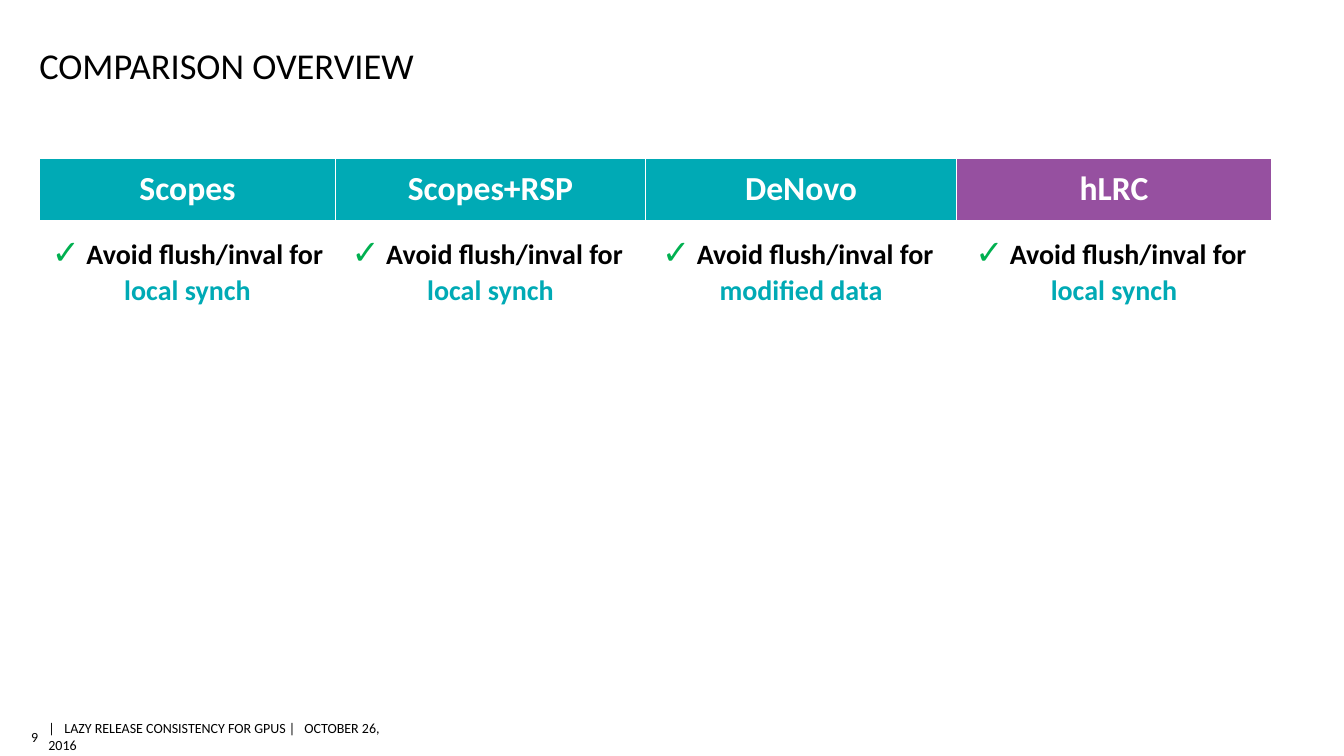
from dataclasses import dataclass

from lxml.etree import SubElement
from pptx import Presentation
from pptx.dml.color import RGBColor
from pptx.enum.text import MSO_ANCHOR, PP_ALIGN
from pptx.oxml.ns import qn
from pptx.util import Inches, Pt


@dataclass(frozen=True)
class Theme:
    font: str = "Calibri"
    black: str = "000000"
    white: str = "FFFFFF"
    teal: str = "00AAB5"
    purple: str = "9650A0"
    green: str = "00B050"
    title: int = 26
    heading: int = 24
    body: int = 20
    footer: int = 10


THEME = Theme()
COLUMN_WIDTHS = (2.94, 3.07, 3.09, 3.12)
ROW_HEIGHTS = (0.62, 0.99)
# Heading, heading fill, what the approach avoids flushing for
APPROACHES = (
    ("Scopes", THEME.teal, "local synch"),
    ("Scopes+RSP", THEME.teal, "local synch"),
    ("DeNovo", THEME.teal, "modified data"),
    ("hLRC", THEME.purple, "local synch"),
)


def add_span(para, text, size=THEME.body, color=THEME.black, bold=False):
    span = para.add_run()
    span.text = text
    span.font.name = THEME.font
    span.font.size = Pt(size)
    span.font.bold = bold
    span.font.color.rgb = RGBColor.from_string(color)


def add_text(page, box, text, size, anchor=MSO_ANCHOR.MIDDLE,
             align=PP_ALIGN.LEFT, top=0.04, bottom=0.04, tabs=()):
    frame = page.shapes.add_textbox(*map(Inches, box)).text_frame
    frame.word_wrap = True
    frame.vertical_anchor = anchor
    frame.margin_left = frame.margin_right = 0
    frame.margin_top, frame.margin_bottom = Inches(top), Inches(bottom)
    para = frame.paragraphs[0]
    para.alignment = align
    if tabs:
        stops = SubElement(para._p.get_or_add_pPr(), qn("a:tabLst"))
        for position in tabs:
            SubElement(stops, qn("a:tab"), pos=str(Inches(position)), algn="l")
    add_span(para, text, size=size)


def style_cell(cell, fill=None):
    """Set the fill and white one-point borders of a cell."""
    cell.vertical_anchor = MSO_ANCHOR.MIDDLE
    properties = cell._tc.get_or_add_tcPr()
    for side in ("a:lnL", "a:lnR", "a:lnT", "a:lnB"):
        line = SubElement(properties, qn(side), w=str(Pt(1)))
        solid = SubElement(line, qn("a:solidFill"))
        SubElement(solid, qn("a:srgbClr"), val=THEME.white)
    if fill:
        cell.fill.solid()
        cell.fill.fore_color.rgb = RGBColor.from_string(fill)
    else:
        cell.fill.background()


def centred(para):
    para.alignment = PP_ALIGN.CENTER
    return para


def add_comparison(page, left, top):
    size = (sum(COLUMN_WIDTHS), sum(ROW_HEIGHTS))
    frame = page.shapes.add_table(len(ROW_HEIGHTS), len(APPROACHES),
                                  *map(Inches, (left, top, *size)))
    table = frame.table
    table.horz_banding = False
    for row, height in zip(table.rows, ROW_HEIGHTS):
        row.height = Inches(height)
    for index, (name, fill, benefit) in enumerate(APPROACHES):
        table.columns[index].width = Inches(COLUMN_WIDTHS[index])
        # Heading
        head = table.cell(0, index)
        style_cell(head, fill)
        add_span(centred(head.text_frame.paragraphs[0]), name,
                 size=THEME.heading, color=THEME.white, bold=True)
        # Benefit
        body = table.cell(1, index)
        style_cell(body)
        para = centred(body.text_frame.paragraphs[0])
        add_span(para, "✓", size=THEME.heading, color=THEME.green, bold=True)
        add_span(para, " Avoid flush/inval for ", bold=True)
        add_span(centred(body.text_frame.add_paragraph()), benefit,
                 color=THEME.teal, bold=True)


def add_footer(page, left, top, height):
    add_text(page, (left, top, 0.16, height), "9", THEME.footer,
             align=PP_ALIGN.RIGHT)
    add_text(page, (left + 0.26, top, 3.46, height),
             "|\tLAZY RELEASE CONSISTENCY FOR GPUS |\tOCTOBER 26, 2016",
             THEME.footer, tabs=(0.16, 2.54))


def main():
    deck = Presentation()
    deck.slide_width, deck.slide_height = Inches(13.33), Inches(7.5)
    page = deck.slides.add_slide(deck.slide_layouts[6])
    margin = 0.39
    add_footer(page, 0.22, 7.18, 0.26)
    add_comparison(page, margin, 1.57)
    add_text(page, (margin, 0.34, 11.2, 0.52), "COMPARISON OVERVIEW",
             THEME.title, anchor=MSO_ANCHOR.BOTTOM, top=0.05, bottom=0)
    deck.save("out.pptx")


if __name__ == "__main__":
    main()
